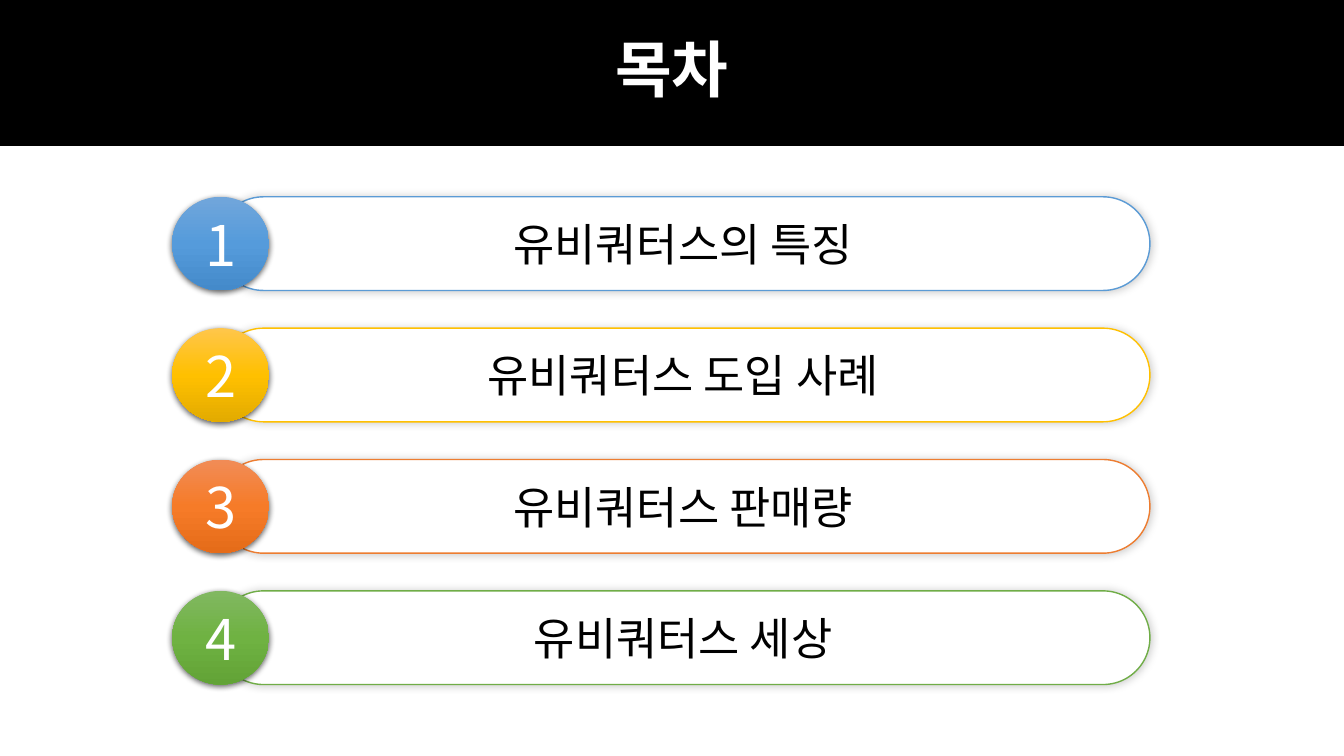
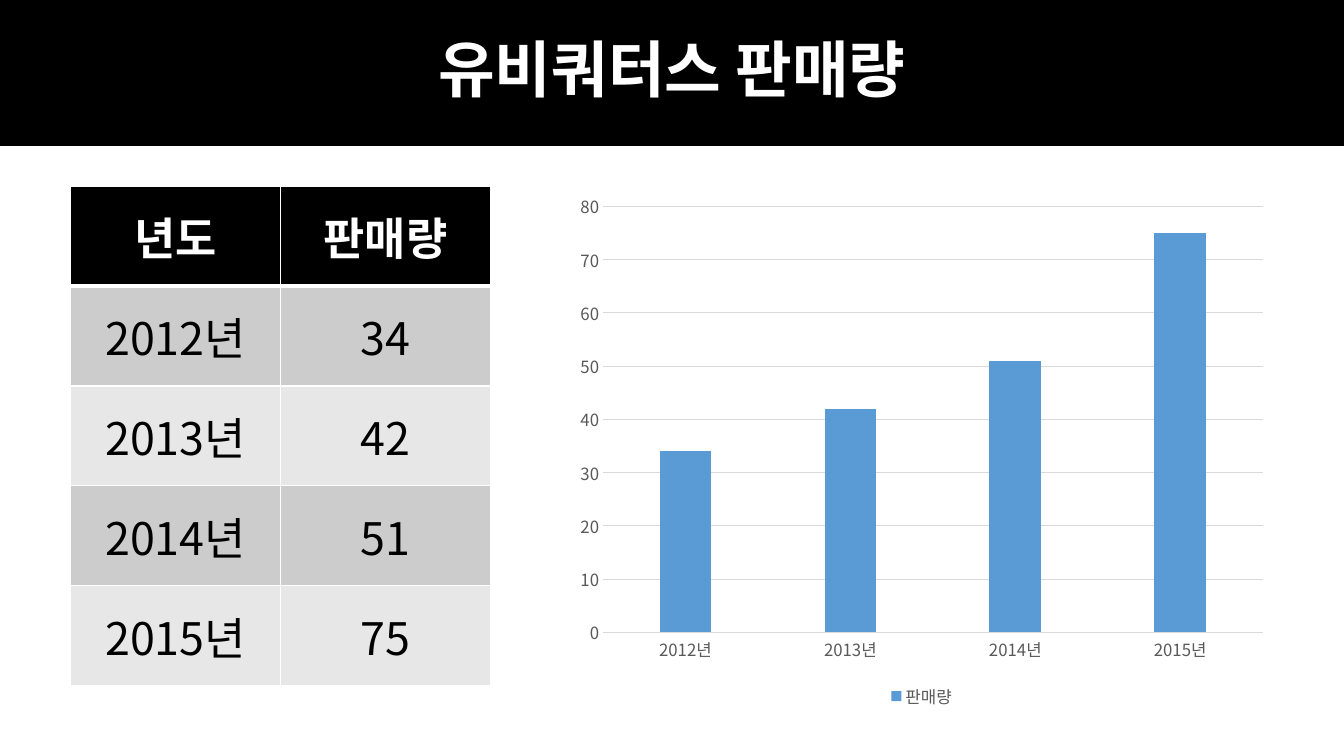
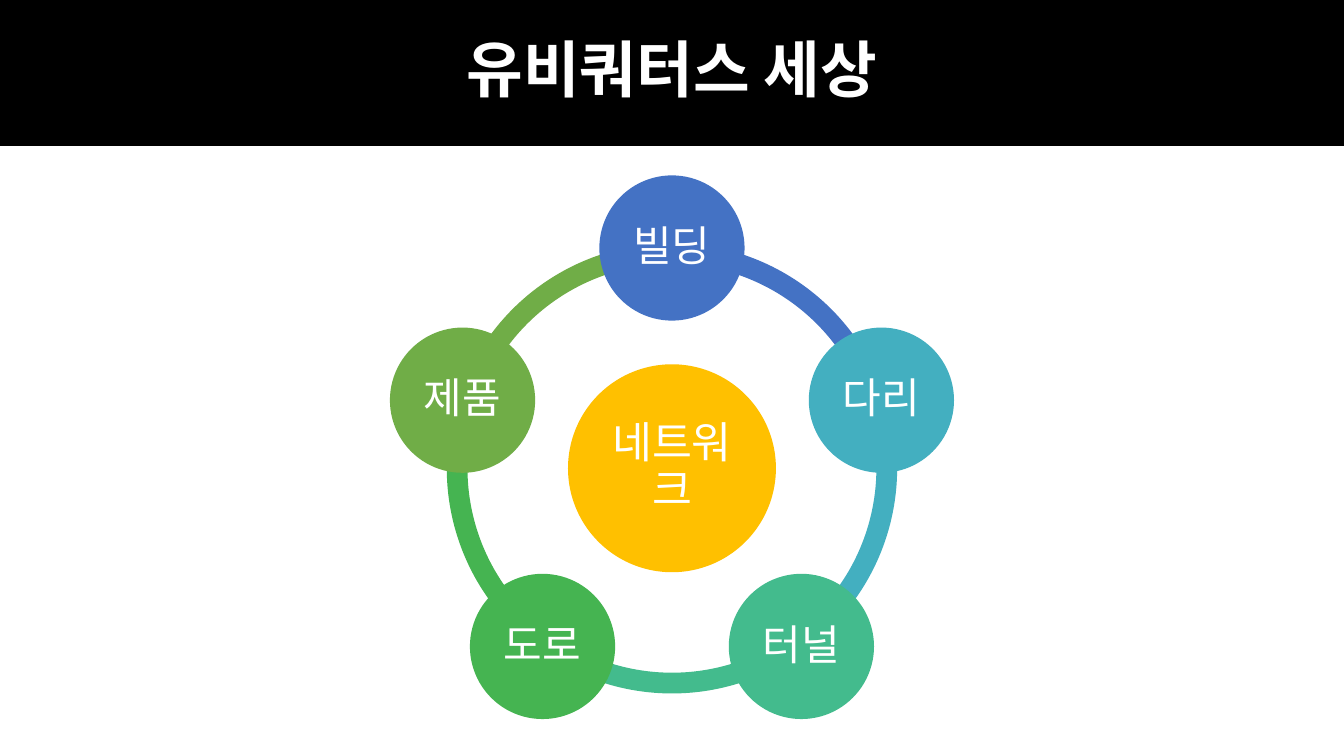
from math import cos, radians, sin

from lxml.etree import SubElement
from pptx import Presentation
from pptx.chart.data import CategoryChartData
from pptx.dml.color import RGBColor
from pptx.enum.chart import XL_CHART_TYPE as ChartType
from pptx.enum.chart import XL_LEGEND_POSITION as LegendPosition
from pptx.enum.chart import XL_TICK_MARK as TickMark
from pptx.enum.shapes import MSO_SHAPE as Preset
from pptx.enum.text import MSO_ANCHOR as Anchor
from pptx.enum.text import PP_ALIGN as Align
from pptx.oxml.ns import qn
from pptx.util import Cm, Pt

FONT = "Noto Sans CJK KR"
BLACK = RGBColor(0x00, 0x00, 0x00)
WHITE = RGBColor(0xFF, 0xFF, 0xFF)
BLUE = RGBColor(0x5B, 0x9B, 0xD5)
GOLD = RGBColor(0xFF, 0xC0, 0x00)
ORANGE = RGBColor(0xED, 0x7D, 0x31)
GREEN = RGBColor(0x70, 0xAD, 0x47)
INDIGO = RGBColor(0x44, 0x72, 0xC4)
TEAL = RGBColor(0x43, 0xAF, 0xC0)
MINT = RGBColor(0x43, 0xBB, 0x8D)
EMERALD = RGBColor(0x45, 0xB4, 0x51)
DARK_BAND = RGBColor(0xCC, 0xCC, 0xCC)
LIGHT_BAND = RGBColor(0xE7, 0xE7, 0xE7)
AXIS_TEXT = RGBColor(0x59, 0x59, 0x59)
GRID = RGBColor(0xD9, 0xD9, 0xD9)

SLIDE_WIDTH, SLIDE_HEIGHT = 33.87, 19.05
BAND_HEIGHT = 3.66

TITLE_TEXT = {"size": Pt(44), "bold": True}
NUMBER_TEXT = {"size": Pt(40), "bold": False}
BODY_TEXT = {"size": Pt(32), "bold": False}
HEADER_TEXT = {"size": Pt(32), "bold": True}
HUB_TEXT = {"size": Pt(31), "bold": False}
NODE_TEXT = {"size": Pt(30), "bold": False}
CHART_TEXT = {"size": Pt(12), "bold": False}

PILL_SHADOW = {"opacity": 20, "blur": 6, "distance": 0, "angle": 315}
BADGE_SHADOW = {"opacity": 63, "blur": 4.5, "distance": 1.5, "angle": 90}

CONTENTS = [
    ("유비쿼터스의 특징", BLUE, ("71A6DB", "559BDB", "448ACA")),
    ("유비쿼터스 도입 사례", GOLD, ("FFC64B", "FFC000", "E3AB00")),
    ("유비쿼터스 판매량", ORANGE, ("F18C57", "F67B28", "E56C19")),
    ("유비쿼터스 세상", GREEN, ("81B861", "6FB242", "62A336")),
]
SERIES_NAME = "판매량"
SALES = {"2012년": 34, "2013년": 42, "2014년": 51, "2015년": 75}
NODES = [
    ("빌딩", INDIGO),
    ("다리", TEAL),
    ("터널", MINT),
    ("도로", EMERALD),
    ("제품", GREEN),
]


def style_font(font, values, color):
    for name, value in {"name": FONT, **values}.items():
        setattr(font, name, value)
    font.color.rgb = color
    SubElement(font._rPr, qn("a:ea"), typeface=FONT)


def write(frame, text, values, color, spacing=1.0):
    """Put one centred paragraph in a text frame."""
    frame.word_wrap = True
    para = frame.paragraphs[0]
    para.alignment = Align.CENTER
    para.line_spacing = spacing
    span = para.add_run()
    span.text = text
    style_font(span.font, values, color)


def add_block(page, preset, left, top, width, height, fill, line=None):
    block = page.shapes.add_shape(preset, Cm(left), Cm(top), Cm(width), Cm(height))
    block.shadow.inherit = False
    block.fill.solid()
    block.fill.fore_color.rgb = fill
    if line is None:
        block.line.fill.background()
    else:
        block.line.color.rgb = line
        block.line.width = Pt(1)
    block.text_frame.vertical_anchor = Anchor.MIDDLE
    return block


def add_disc(page, center_x, center_y, diameter, fill, text, values):
    disc = add_block(page, Preset.OVAL, center_x - diameter / 2,
                     center_y - diameter / 2, diameter, diameter, fill)
    frame = disc.text_frame
    for side in ("left", "top", "right", "bottom"):
        setattr(frame, f"margin_{side}", Cm(0.1))
    write(frame, text, values, WHITE, 0.9)


def add_shadow(block, opacity, blur, distance, angle):
    effects = block._element.spPr.find(qn("a:effectLst"))
    shadow = SubElement(effects, qn("a:outerShdw"), blurRad=str(Pt(blur)),
                        dist=str(Pt(distance)), dir=str(angle * 60000),
                        algn="ctr", rotWithShape="0")
    color = SubElement(shadow, qn("a:srgbClr"), val=str(BLACK))
    SubElement(color, qn("a:alpha"), val=str(opacity * 1000))


def fill_downward(block, colors):
    """Fill with evenly spaced gradient colours from top to bottom."""
    block.fill.gradient()
    block.fill.gradient_angle = 270
    stops = block._element.spPr.find(".//" + qn("a:gsLst"))
    for stop in list(stops):
        stops.remove(stop)
    for index, color in enumerate(colors):
        position = 100000 * index // (len(colors) - 1)
        stop = SubElement(stops, qn("a:gs"), pos=str(position))
        SubElement(stop, qn("a:srgbClr"), val=color)


def add_page(deck, title):
    page = deck.slides.add_slide(deck.slide_layouts[6])
    band = add_block(page, Preset.RECTANGLE, 0, 0, SLIDE_WIDTH, BAND_HEIGHT,
                     BLACK, BLACK)
    write(band.text_frame, title, TITLE_TEXT, WHITE, 0.9)
    return page


def add_contents_row(page, number, text, color, gradient):
    top, height = 4.96 + 3.31 * (number - 1), 2.36
    pill = add_block(page, Preset.ROUNDED_RECTANGLE, 5.46, top, 23.52, height,
                     WHITE, color)
    pill.adjustments[0] = 0.5
    add_shadow(pill, **PILL_SHADOW)
    write(pill.text_frame, text, BODY_TEXT, BLACK)
    badge = add_block(page, Preset.OVAL, 4.34, top, 2.44, height, color)
    fill_downward(badge, gradient)
    add_shadow(badge, **BADGE_SHADOW)
    write(badge.text_frame, str(number), NUMBER_TEXT, WHITE)


def set_borders(cell, widths):
    """Draw white borders; widths maps L, R, T, B, in that order, to points."""
    properties = cell._tc.get_or_add_tcPr()
    for side, width in widths.items():
        border = SubElement(properties, qn(f"a:ln{side}"), w=str(Pt(width)))
        fill = SubElement(border, qn("a:solidFill"))
        SubElement(fill, qn("a:srgbClr"), val=str(WHITE))


def add_sales_table(page):
    rows = [("년도", SERIES_NAME), *SALES.items()]
    table = page.shapes.add_table(len(rows), 2, Cm(1.78), Cm(4.7), Cm(10.58),
                                  Cm(12.57)).table
    for row_index, values in enumerate(rows):
        header = row_index == 0
        band = DARK_BAND if row_index % 2 else LIGHT_BAND
        for column_index, value in enumerate(values):
            cell = table.cell(row_index, column_index)
            cell.vertical_anchor = Anchor.MIDDLE
            set_borders(cell, {"L": 1, "R": 1, "T": 3 if row_index == 1 else 1,
                               "B": 3 if header else 1})
            cell.fill.solid()
            cell.fill.fore_color.rgb = BLACK if header else band
            write(cell.text_frame, str(value),
                  HEADER_TEXT if header else BODY_TEXT,
                  WHITE if header else BLACK)


def add_sales_chart(page):
    data = CategoryChartData()
    data.categories = list(SALES)
    data.add_series(SERIES_NAME, list(SALES.values()))
    chart = page.shapes.add_chart(ChartType.COLUMN_CLUSTERED, Cm(14.27), Cm(4.62),
                                  Cm(17.91), Cm(13.34), data).chart
    chart.has_title = False
    chart.has_legend = True
    chart.legend.position = LegendPosition.BOTTOM
    chart.legend.include_in_layout = False
    style_font(chart.legend.font, CHART_TEXT, AXIS_TEXT)

    for axis in (chart.category_axis, chart.value_axis):
        axis.major_tick_mark = axis.minor_tick_mark = TickMark.NONE
        style_font(axis.tick_labels.font, CHART_TEXT, AXIS_TEXT)
    chart.value_axis.format.line.fill.background()
    chart.value_axis.has_major_gridlines = True
    for part in (chart.category_axis, chart.value_axis.major_gridlines):
        part.format.line.color.rgb = GRID
        part.format.line.width = Pt(0.75)

    plot = chart.plots[0]
    plot.gap_width, plot.overlap = 219, -27
    plot.vary_by_categories = False
    columns = plot.series[0].format.fill
    columns.solid()
    columns.fore_color.rgb = BLUE


def add_network(page):
    """Draw a hub inside a ring of nodes, each arc in its first node's colour."""
    center_x, center_y = SLIDE_WIDTH / 2, 11.8
    ring, orbit, step = 11.35, 5.55, 360 / len(NODES)
    angles = [270 + step * index for index in range(len(NODES))]

    for angle, (_, color) in reversed(list(zip(angles, NODES))):
        arc = add_block(page, Preset.BLOCK_ARC, center_x - ring / 2,
                        center_y - ring / 2, ring, ring, color)
        arc.adjustments[0] = angle % 360 * 0.6
        arc.adjustments[1] = (angle + step) % 360 * 0.6
        arc.adjustments[2] = 0.046

    add_disc(page, center_x, center_y, 5.24, GOLD, "네트워크", HUB_TEXT)
    for angle, (text, color) in zip(angles, NODES):
        add_disc(page, center_x + orbit * cos(radians(angle)),
                 center_y + orbit * sin(radians(angle)), 3.66, color, text,
                 NODE_TEXT)


def main():
    deck = Presentation()
    deck.slide_width, deck.slide_height = Cm(SLIDE_WIDTH), Cm(SLIDE_HEIGHT)

    page = add_page(deck, "목차")
    for number, row in enumerate(CONTENTS, 1):
        add_contents_row(page, number, *row)

    page = add_page(deck, "유비쿼터스 판매량")
    add_sales_table(page)
    add_sales_chart(page)

    add_network(add_page(deck, "유비쿼터스 세상"))
    deck.save("out.pptx")


if __name__ == "__main__":
    main()
